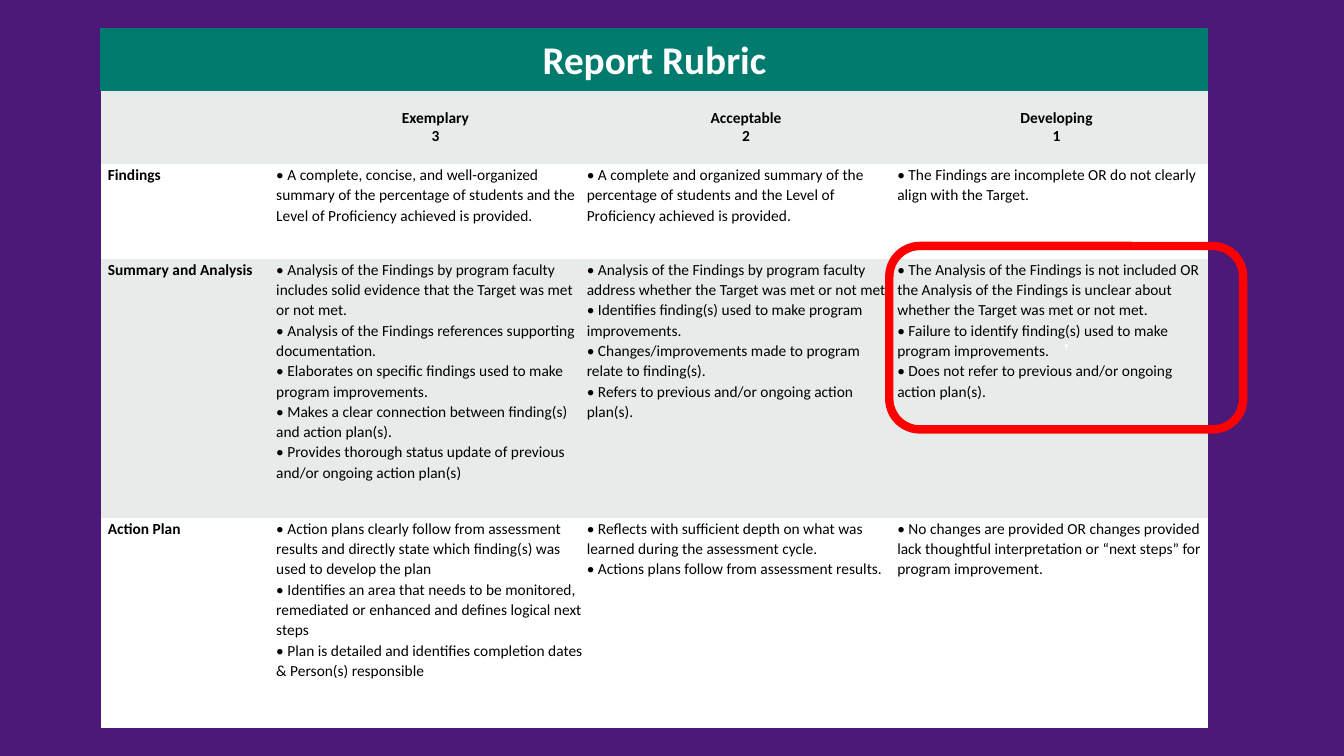
import pptx
import pptx.dml.color
import pptx.enum.shapes
import pptx.enum.text
import pptx.oxml
import pptx.oxml.ns
import pptx.util

Inches = pptx.util.Inches
Pt = pptx.util.Pt
ALIGN = pptx.enum.text.PP_ALIGN
ANCHOR = pptx.enum.text.MSO_ANCHOR

COLORS = {
    "background": "4D1979",
    "banner": "007B6E",
    "band": "E7ECEB",
    "plain": "FFFFFF",
    "text": "000000",
    "highlight": "FF0000",
}
FONT = "Calibri"
NO_GRID_STYLE = "{2D5ABB26-0587-4C30-8999-92F81FD0307C}"

COLUMN_WIDTHS = [1.74, 3.08, 3.08, 3.08]
ROW_HEIGHTS = [0.62, 0.73, 0.94, 2.57, 2.08]
TITLE = "Report Rubric"
LEVELS = [["Exemplary", "3"], ["Acceptable", "2"], ["Developing", "1"]]

# Each criterion lists its points for the three levels
CRITERIA = {
    "Findings": [
        ["A complete, concise, and well-organized summary of the percentage of students "
         "and the Level of Proficiency achieved is provided."],
        ["A complete and organized summary of the percentage of students "
         "and the Level of Proficiency achieved is provided."],
        ["The Findings are incomplete OR do not clearly align with the Target."],
    ],
    "Summary and Analysis": [
        ["Analysis of the Findings by program faculty includes solid evidence "
         "that the Target was met or not met.",
         "Analysis of the Findings references supporting documentation.",
         "Elaborates on specific findings used to make program improvements.",
         "Makes a clear connection between finding(s) and action plan(s).",
         "Provides thorough status update of previous and/or ongoing action plan(s)"],
        ["Analysis of the Findings by program faculty address whether "
         "the Target was met or not met",
         "Identifies finding(s) used to make program improvements.",
         "Changes/improvements made to program relate to finding(s).",
         "Refers to previous and/or ongoing action plan(s)."],
        ["The Analysis of the Findings is not included OR the Analysis of the Findings "
         "is unclear about whether the Target was met or not met.",
         "Failure to identify finding(s) used to make program improvements.",
         "Does not refer to previous and/or ongoing action plan(s)."],
    ],
    "Action Plan": [
        ["Action plans clearly follow from assessment results and directly state "
         "which finding(s) was used to develop the plan",
         "Identifies an area that needs to be monitored, remediated or enhanced "
         "and defines logical next steps",
         "Plan is detailed and identifies completion dates & Person(s) responsible"],
        ["Reflects with sufficient depth on what was learned during the assessment cycle.",
         "Actions plans follow from assessment results."],
        ["No changes are provided OR changes provided lack thoughtful interpretation "
         "or “next steps” for program improvement."],
    ],
}


def color(name):
    return pptx.dml.color.RGBColor.from_string(COLORS[name])


def write(frame, lines, size=11, ink="text", bold=False, align=ALIGN.LEFT, spacing=1.07):
    for index, line in enumerate(lines):
        para = frame.paragraphs[0] if index == 0 else frame.add_paragraph()
        para.alignment = align
        para.line_spacing = spacing
        span = para.add_run()
        span.text = line
        span.font.name = FONT
        span.font.size = Pt(size)
        span.font.bold = bold
        span.font.color.rgb = color(ink)


def format_cell(cell, fill, indent=0, anchor=ANCHOR.TOP):
    cell.fill.solid()
    cell.fill.fore_color.rgb = color(fill)
    cell.margin_left = Inches(indent)
    cell.margin_right = cell.margin_top = cell.margin_bottom = 0
    cell.vertical_anchor = anchor


def add_borders(cell, name):
    properties = cell._tc.get_or_add_tcPr()
    for index, side in enumerate(["lnL", "lnR", "lnT"]):
        properties.insert(index, pptx.oxml.parse_xml(
            f'<a:{side} {pptx.oxml.ns.nsdecls("a")} w="{Pt(1)}"><a:solidFill>'
            f'<a:srgbClr val="{COLORS[name]}"/></a:solidFill></a:{side}>'))


def add_rubric(page, left, top):
    frame = page.shapes.add_table(
        len(ROW_HEIGHTS), len(COLUMN_WIDTHS), Inches(left), Inches(top),
        Inches(sum(COLUMN_WIDTHS)), Inches(sum(ROW_HEIGHTS)))
    table = frame.table
    table.horz_banding = False
    table.first_row = False
    table._tbl.tblPr.find(pptx.oxml.ns.qn("a:tableStyleId")).text = NO_GRID_STYLE
    for column, width in zip(table.columns, COLUMN_WIDTHS):
        column.width = Inches(width)
    for row, height in zip(table.rows, ROW_HEIGHTS):
        row.height = Inches(height)

    # Banner across all columns
    banner = table.cell(0, 0)
    banner.merge(table.cell(0, len(COLUMN_WIDTHS) - 1))
    for cell in table.rows[0].cells:
        format_cell(cell, "banner", anchor=ANCHOR.MIDDLE)
        add_borders(cell, "banner")
    write(banner.text_frame, [TITLE], 28, "plain", True, ALIGN.CENTER)

    # Level headings
    format_cell(table.cell(1, 0), "band")
    for column, level in enumerate(LEVELS, start=1):
        cell = table.cell(1, column)
        format_cell(cell, "band", 0.08, ANCHOR.MIDDLE)
        write(cell.text_frame, level, bold=True, align=ALIGN.CENTER, spacing=Pt(12.8))

    # Criteria rows with alternating fills
    for row, (criterion, levels) in enumerate(CRITERIA.items(), start=2):
        fill = "band" if row % 2 else "plain"
        label = table.cell(row, 0)
        format_cell(label, fill, 0.07)
        write(label.text_frame, [criterion], bold=True)
        for column, points in enumerate(levels, start=1):
            cell = table.cell(row, column)
            format_cell(cell, fill)
            write(cell.text_frame, ["• " + point for point in points])


def add_highlight(page, left, top, width, height):
    outline = page.shapes.add_shape(
        pptx.enum.shapes.MSO_SHAPE.ROUNDED_RECTANGLE,
        Inches(left), Inches(top), Inches(width), Inches(height))
    outline.shadow.inherit = False
    outline.fill.background()
    outline.line.color.rgb = color("highlight")
    outline.line.width = Pt(6)
    outline.text_frame.vertical_anchor = ANCHOR.MIDDLE
    write(outline.text_frame, [","], 18, "plain", align=ALIGN.CENTER, spacing=1.0)


def main():
    deck = pptx.Presentation()
    deck.slide_width = Inches(13.33)
    deck.slide_height = Inches(7.5)
    page = deck.slides.add_slide(deck.slide_layouts[6])
    page.background.fill.solid()
    page.background.fill.fore_color.rgb = color("background")
    add_rubric(page, 1, 0.28)
    add_highlight(page, 8.82, 2.44, 3.51, 1.82)
    deck.save("out.pptx")


if __name__ == "__main__":
    main()
